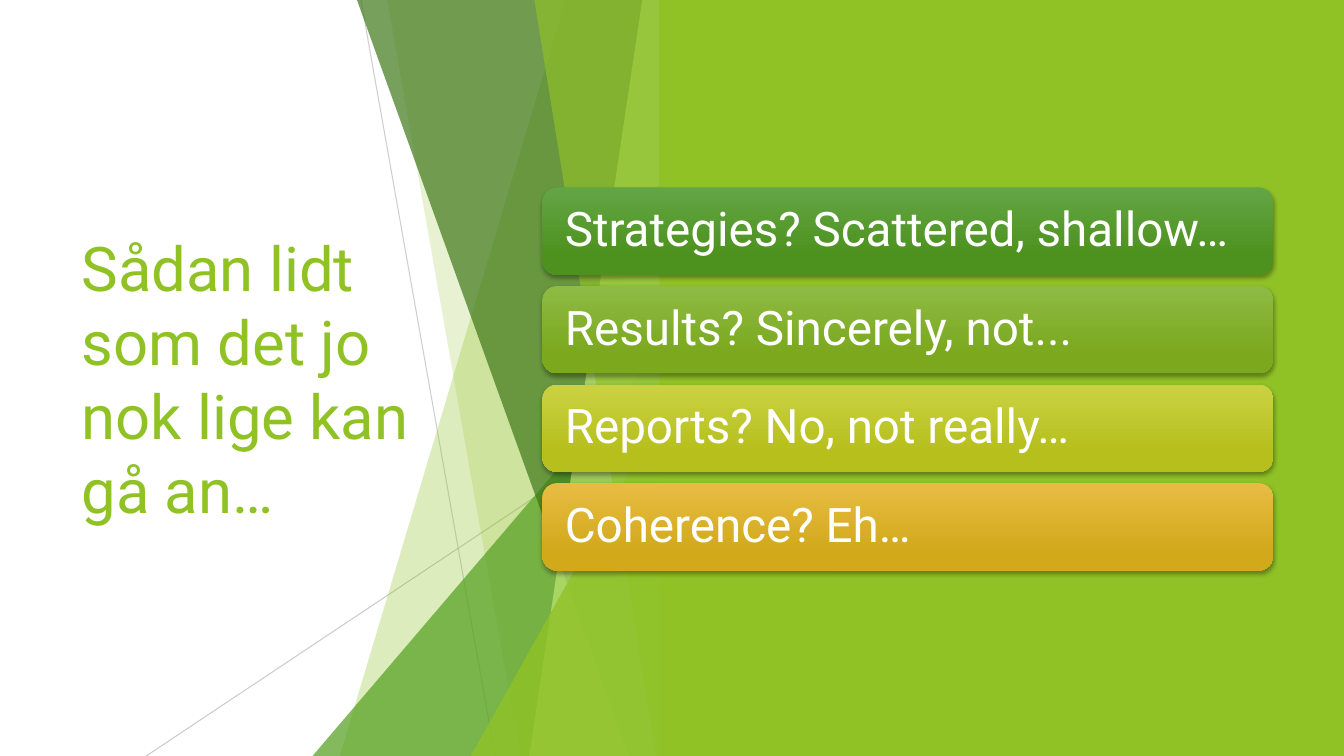
from lxml import etree
from pptx import Presentation
from pptx import util as u
from pptx.dml.color import RGBColor
from pptx.enum import shapes, text
from pptx.oxml import parse_xml
from pptx.oxml.ns import nsdecls, qn

FONT = "Roboto"
COLORS = {
    "white": "FFFFFF",
    "line": "BFBFBF",
    "lime": "90C226",
    "green": "54A021",
    "forest": "3F7819",
    "pale": "C0E474",
}
# Card text, top colour, bottom colour
CARDS = [
    ("Strategies? Scattered, shallow…", "63A545", "4D921E"),
    ("Results? Sincerely, not...", "8EBB44", "7BA81D"),
    ("Reports? No, not really…", "CAD243", "B6BF1B"),
    ("Coherence? Eh…", "E7BC43", "D2A91B"),
]
# Facets from back to front, measured leftwards from the right edge:
# bands have a top and a bottom inset, triangles a width and a height
FACETS = [
    ("band", 1.05, 3.29, "lime", 30),
    ("band", 2.82, 1.5, "lime", 20),
    ("triangle", 3.56, 4.17, "green", 72),
    ("band", 3.12, 0.42, "forest", 70),
    ("band", 0.29, 1.41, "pale", 70),
    ("band", 1.36, 0.15, "lime", 65),
    ("triangle", 1.99, 3.57, "lime", 80),
]


def set_alpha(color_parent, percent):
    """Make the solid colour inside an element partly transparent."""
    color = next(color_parent.iter(qn("a:srgbClr")))
    etree.SubElement(color, qn("a:alpha")).set("val", str(percent * 1000))


def paint(shape, color, alpha=100):
    shape.shadow.inherit = False
    shape.fill.solid()
    shape.fill.fore_color.rgb = RGBColor.from_string(COLORS[color])
    shape.line.fill.background()
    if alpha < 100:
        set_alpha(shape.element.spPr.find(qn("a:solidFill")), alpha)


def add_run(paragraph, words, size, color):
    run = paragraph.add_run()
    run.text = words
    run.font.name = FONT
    run.font.size = u.Pt(size)
    run.font.color.rgb = RGBColor.from_string(COLORS[color])


def add_thin_line(group, start, end, alpha):
    line = group.shapes.add_connector(
        shapes.MSO_CONNECTOR.STRAIGHT, *map(u.Inches, start + end))
    line.line.width = u.Pt(0.75)
    line.line.color.rgb = RGBColor.from_string(COLORS["line"])
    properties = line.element.spPr
    set_alpha(properties, alpha)
    etree.SubElement(properties, qn("a:effectLst"))


def add_title(slide, left, top, width, height):
    title = slide.shapes.title
    title.left, title.top, title.width, title.height = map(
        u.Inches, (left, top, width, height))
    frame = title.text_frame
    frame.word_wrap = True
    frame.auto_size = text.MSO_AUTO_SIZE.NONE
    frame.vertical_anchor = text.MSO_ANCHOR.MIDDLE
    paragraph = frame.paragraphs[0]
    paragraph.alignment = text.PP_ALIGN.LEFT
    add_run(paragraph, "Sådan lidt som det jo nok lige kan gå an…", 44, "lime")


def add_facets(slide, left, top, width, height):
    right, bottom = left + width, top + height
    group = slide.shapes.add_group_shape()
    # Thin crossing lines
    add_thin_line(group, (right - 3.08, top), (right - 1.75, bottom), 75)
    add_thin_line(group, (right, top + 4.03), (left, bottom), 80)
    # Translucent bands and triangles
    for kind, first, second, color, alpha in FACETS:
        if kind == "band":
            corners = [(right - first, top), (right, top),
                       (right, bottom), (right - second, bottom)]
            points = [(u.Inches(x), u.Inches(y)) for x, y in corners]
            builder = group.shapes.build_freeform(*points[0])
            builder.add_line_segments(points[1:], close=True)
            facet = builder.convert_to_shape()
        else:
            facet = group.shapes.add_shape(
                shapes.MSO_SHAPE.ISOSCELES_TRIANGLE,
                u.Inches(right - first), u.Inches(bottom - second),
                u.Inches(first), u.Inches(second))
            facet.adjustments[0] = 1
        paint(facet, color, alpha)


def add_panel(slide, left, top, width, height):
    panel = slide.shapes.add_shape(
        shapes.MSO_SHAPE.RECTANGLE, *map(u.Inches, (left, top, width, height)))
    paint(panel, "lime")


def add_card(slide, left, top, width, height, words, light, dark):
    card = slide.shapes.add_shape(
        shapes.MSO_SHAPE.ROUNDED_RECTANGLE,
        *map(u.Inches, (left, top, width, height)))
    card.line.fill.background()
    # Downward gradient
    card.fill.gradient()
    card.fill.gradient_angle = 270
    for stop, position, color in zip(
            card.fill.gradient_stops, (0, 0.78), (light, dark)):
        stop.position = position
        stop.color.rgb = RGBColor.from_string(color)
    # Soft shadow below
    card.element.spPr.append(parse_xml(
        f'<a:effectLst {nsdecls("a")}><a:outerShdw blurRad="{u.Pt(3)}" '
        f'dist="{u.Pt(2)}" dir="5400000" rotWithShape="0">'
        '<a:srgbClr val="000000"><a:alpha val="35000"/></a:srgbClr>'
        '</a:outerShdw></a:effectLst>'))
    # Label
    frame = card.text_frame
    frame.word_wrap = True
    frame.vertical_anchor = text.MSO_ANCHOR.MIDDLE
    frame.margin_left = frame.margin_right = u.Inches(0.18)
    paragraph = frame.paragraphs[0]
    paragraph.alignment = text.PP_ALIGN.LEFT
    paragraph.line_spacing = 0.9
    add_run(paragraph, words, 34, "white")


def add_cards(slide, left, top, width, height):
    gap = 0.11
    card_height = (height - gap * (len(CARDS) - 1)) / len(CARDS)
    for index, card in enumerate(CARDS):
        card_top = top + index * (card_height + gap)
        add_card(slide, left, card_top, width, card_height, *card)


def main():
    presentation = Presentation()
    presentation.slide_width = u.Inches(13.33)
    presentation.slide_height = u.Inches(7.5)
    slide = presentation.slides.add_slide(presentation.slide_layouts[5])
    slide.background.fill.solid()
    slide.background.fill.fore_color.rgb = RGBColor.from_string(COLORS["white"])

    add_title(slide, 0.71, 1.51, 3.88, 4.48)
    add_facets(slide, 1.45, 0, 5.21, 7.5)
    add_panel(slide, 6.54, 0, 6.79, 7.5)
    add_cards(slide, 5.38, 1.86, 7.25, 3.8)
    presentation.save("out.pptx")


if __name__ == "__main__":
    main()
